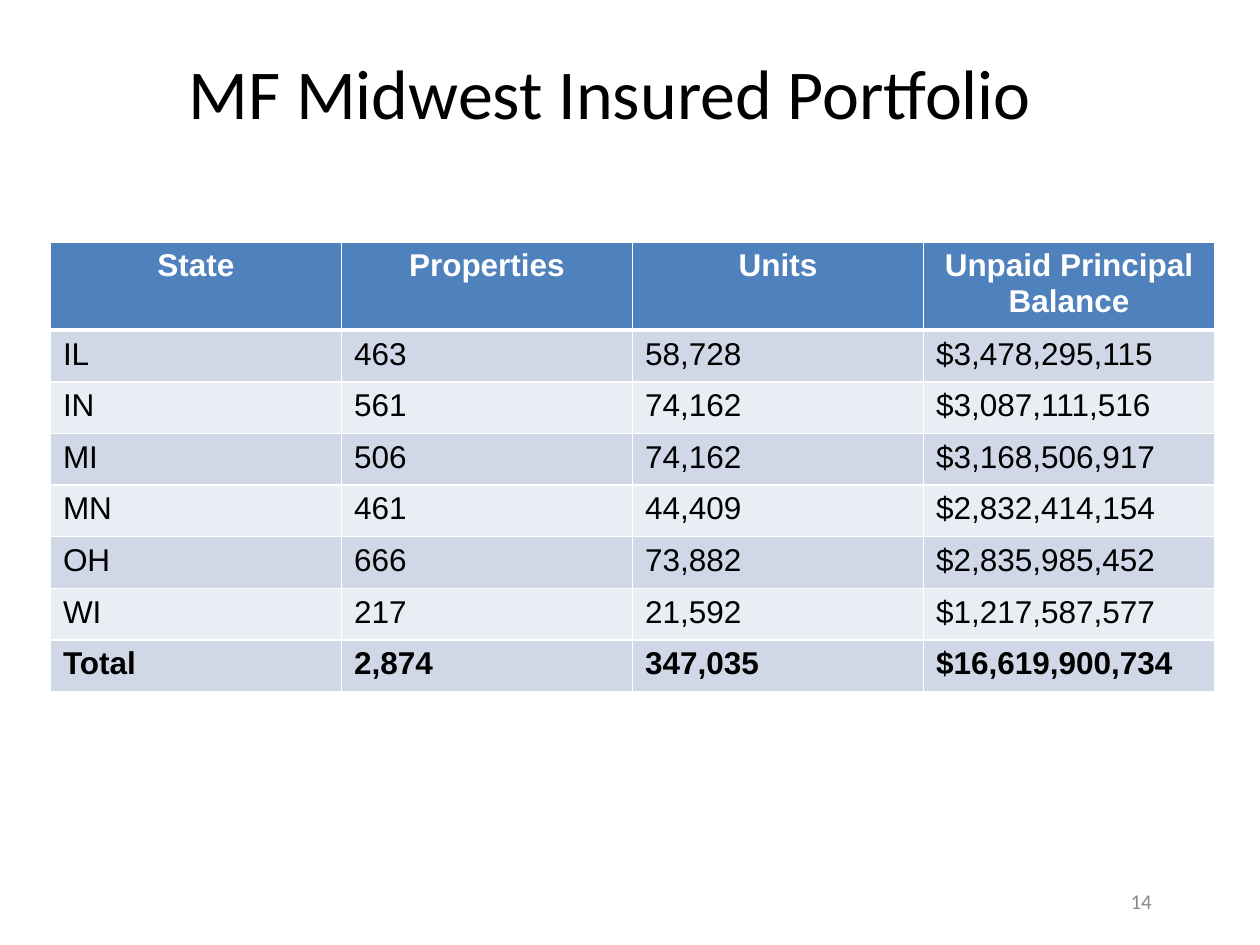
from dataclasses import dataclass

from lxml.etree import SubElement
from pptx import Presentation
from pptx.dml.color import RGBColor
from pptx.enum.text import MSO_ANCHOR, PP_ALIGN
from pptx.oxml.ns import qn
from pptx.util import Inches, Pt

BLACK, WHITE, GRAY = "000000", "FFFFFF", "898989"
HEADER_FILL, BAND_FILLS = "4F81BD", ("E9EDF4", "D0D8E8")
COL_WIDTH, ROW_HEIGHT = 2.31, 0.41

ROWS = [
    ("State", "Properties", "Units", "Unpaid Principal Balance"),
    ("IL", "463", "58,728", "$3,478,295,115"),
    ("IN", "561", "74,162", "$3,087,111,516"),
    ("MI", "506", "74,162", "$3,168,506,917"),
    ("MN", "461", "44,409", "$2,832,414,154"),
    ("OH", "666", "73,882", "$2,835,985,452"),
    ("WI", "217", "21,592", "$1,217,587,577"),
    ("Total", "2,874", "347,035", "$16,619,900,734"),
]


@dataclass
class Label:
    text: str
    left: float
    top: float
    width: float
    height: float
    size: float
    color: str
    align: PP_ALIGN


LABELS = [
    Label("MF Midwest Insured Portfolio", 0.34, 0.28, 9, 0.9, 40, BLACK, PP_ALIGN.CENTER),
    Label("14", 7.17, 6.95, 2.07, 0.4, 12, GRAY, PP_ALIGN.RIGHT),
]


def rgb(color: str) -> RGBColor:
    return RGBColor.from_string(color)


def write(tf, text: str, font: str, size: float, color: str, align: PP_ALIGN, bold: bool = False) -> None:
    tf.text = text
    p = tf.paragraphs[0]
    p.alignment = align
    f = p.runs[0].font
    f.name, f.size, f.bold = font, Pt(size), bold
    f.color.rgb = rgb(color)


def add_label(s, label: Label) -> None:
    sp = s.shapes.add_textbox(
        Inches(label.left), Inches(label.top), Inches(label.width), Inches(label.height))
    tf = sp.text_frame
    tf.word_wrap = True
    tf.vertical_anchor = MSO_ANCHOR.MIDDLE
    write(tf, label.text, "Calibri", label.size, label.color, label.align)


def add_borders(cell, top: float, bottom: float) -> None:
    """Draw white cell borders; must run before the cell is filled."""
    tc_pr = cell._tc.get_or_add_tcPr()
    for side, width in (("L", 1), ("R", 1), ("T", top), ("B", bottom)):
        ln = SubElement(tc_pr, qn(f"a:ln{side}"), w=str(Pt(width)))
        fill = SubElement(ln, qn("a:solidFill"))
        SubElement(fill, qn("a:srgbClr"), val=WHITE)


def add_portfolio_table(s, left: float, top: float) -> None:
    n_rows, n_cols = len(ROWS), len(ROWS[0])
    table = s.shapes.add_table(
        n_rows, n_cols, Inches(left), Inches(top),
        Inches(n_cols * COL_WIDTH), Inches(n_rows * ROW_HEIGHT)).table
    for col in table.columns:
        col.width = Inches(COL_WIDTH)
    for i, values in enumerate(ROWS):
        table.rows[i].height = Inches(ROW_HEIGHT)
        header, total = i == 0, i == n_rows - 1
        for j, value in enumerate(values):
            cell = table.cell(i, j)
            add_borders(cell, top=3 if i == 1 else 1, bottom=3 if header else 1)
            cell.fill.solid()
            cell.fill.fore_color.rgb = rgb(HEADER_FILL if header else BAND_FILLS[i % 2])
            write(cell.text_frame, value, "Arial", 18, WHITE if header else BLACK,
                  PP_ALIGN.CENTER if header else PP_ALIGN.LEFT, bold=header or total)


def main() -> None:
    prs = Presentation()
    prs.slide_width, prs.slide_height = Inches(10), Inches(7.5)
    s = prs.slides.add_slide(prs.slide_layouts[6])
    for label in LABELS:
        add_label(s, label)
    add_portfolio_table(s, 0.4, 1.92)
    prs.save("out.pptx")


if __name__ == "__main__":
    main()
